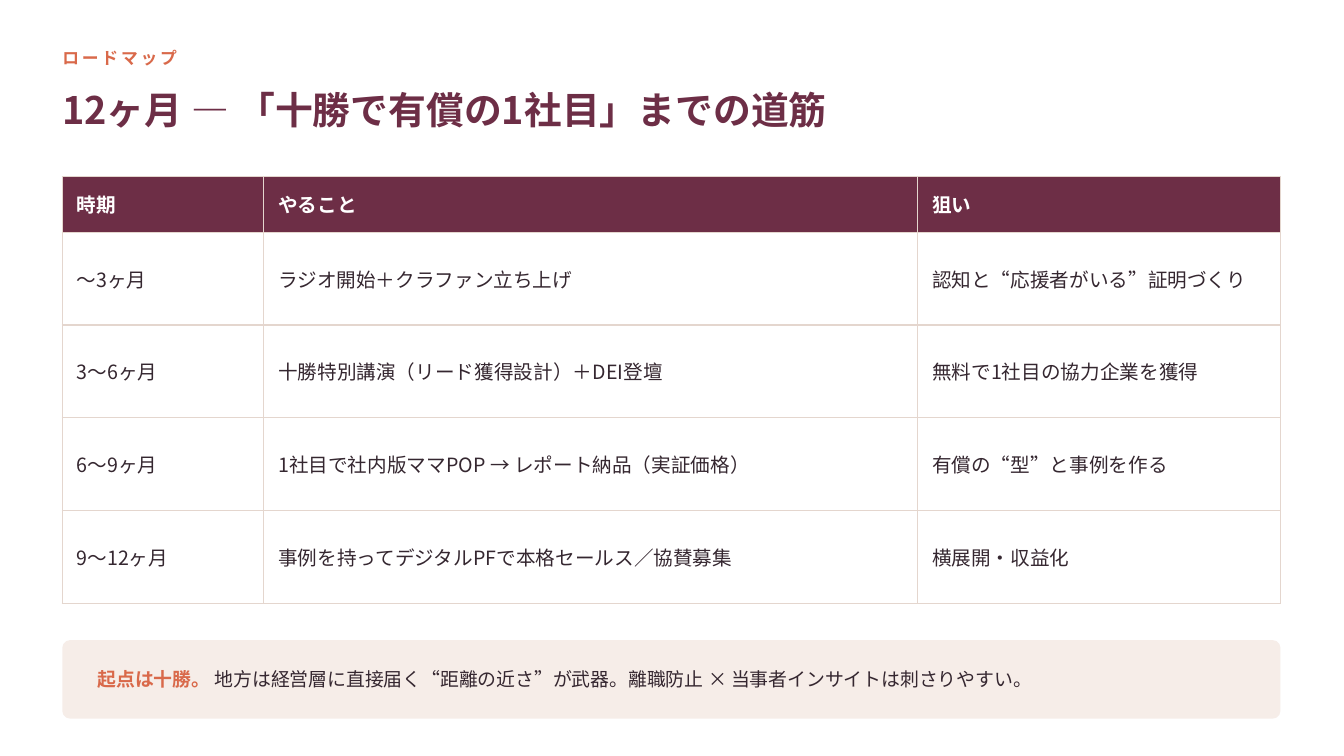
from lxml import etree
from pptx import Presentation
from pptx.dml.color import RGBColor
from pptx.enum.shapes import MSO_SHAPE
from pptx.enum.text import MSO_ANCHOR
from pptx.oxml.ns import qn
from pptx.util import Cm, Pt

ROUNDED = MSO_SHAPE.ROUNDED_RECTANGLE
MIDDLE = MSO_ANCHOR.MIDDLE

FONT = "Noto Sans CJK JP"
PLUM, CORAL, INK = "6D2E46", "D9694A", "352730"
WHITE, BLUSH, RULE = "FFFFFF", "F6EDE8", "E4D6CE"

KICKER = "ロードマップ"
TITLE = "12ヶ月 — 「十勝で有償の1社目」までの道筋"
ROADMAP = [
    ("時期", "やること", "狙い"),
    ("〜3ヶ月", "ラジオ開始＋クラファン立ち上げ", "認知と“応援者がいる”証明づくり"),
    ("3〜6ヶ月", "十勝特別講演（リード獲得設計）＋DEI登壇", "無料で1社目の協力企業を獲得"),
    ("6〜9ヶ月", "1社目で社内版ママPOP → レポート納品（実証価格）", "有償の“型”と事例を作る"),
    ("9〜12ヶ月", "事例を持ってデジタルPFで本格セールス／協賛募集", "横展開・収益化"),
]
NOTE_LEAD = "起点は十勝。 "
NOTE_BODY = "地方は経営層に直接届く“距離の近さ”が武器。離職防止 × 当事者インサイトは刺さりやすい。"

# Lengths in centimetres
LEFT, WIDTH = 1.57, 30.7
COLUMNS = (5.08, 16.48, 9.14)
TABLE_TOP, HEAD_HEIGHT, ROW_HEIGHT = 4.45, 1.4, 2.34
NOTE_TOP, NOTE_HEIGHT, NOTE_INDENT = 16.13, 1.98, 0.89


def rgb(color):
    return RGBColor.from_string(color)


def style_run(r, size, color, bold=False, spacing=0):
    r.font.name = FONT
    r.font.size = Pt(size)
    r.font.bold = bold
    r.font.color.rgb = rgb(color)
    rPr = r.font._element
    rPr.find(qn("a:latin")).addnext(rPr.makeelement(qn("a:ea"), {"typeface": FONT}))
    if spacing:
        rPr.set("spc", str(spacing * 100))


def add_text(slide, left, top, width, height, runs):
    """Add a one-paragraph box; each run is (text, size, color, bold, spacing)."""
    box = slide.shapes.add_textbox(Cm(left), Cm(top), Cm(width), Cm(height))
    tf = box.text_frame
    tf.word_wrap = True
    tf.vertical_anchor = MIDDLE
    tf.margin_left = tf.margin_right = tf.margin_top = tf.margin_bottom = 0
    for text, *style in runs:
        r = tf.paragraphs[0].add_run()
        r.text = text
        style_run(r, *style)


def add_borders(cell):
    tcPr = cell._tc.get_or_add_tcPr()
    for side in ("lnL", "lnR", "lnT", "lnB"):
        line = etree.SubElement(tcPr, qn("a:" + side), w=str(Pt(1)))
        fill = etree.SubElement(line, qn("a:solidFill"))
        etree.SubElement(fill, qn("a:srgbClr"), val=RULE)


def add_roadmap(slide):
    height = HEAD_HEIGHT + ROW_HEIGHT * (len(ROADMAP) - 1)
    table = slide.shapes.add_table(len(ROADMAP), len(COLUMNS), Cm(LEFT), Cm(TABLE_TOP),
                                   Cm(WIDTH), Cm(height)).table
    for column, width in zip(table.columns, COLUMNS):
        column.width = Cm(width)
    for i, texts in enumerate(ROADMAP):
        is_head = i == 0
        table.rows[i].height = Cm(HEAD_HEIGHT if is_head else ROW_HEIGHT)
        for j, text in enumerate(texts):
            cell = table.cell(i, j)
            cell.text_frame.text = text
            style_run(cell.text_frame.paragraphs[0].runs[0], 14,
                      WHITE if is_head else INK, is_head)
            cell.vertical_anchor = MIDDLE
            cell.margin_left = cell.margin_right = Cm(0.36)
            cell.margin_top = cell.margin_bottom = Cm(0.15)
            add_borders(cell)
            cell.fill.solid()
            cell.fill.fore_color.rgb = rgb(PLUM if is_head else WHITE)


def add_note(slide):
    sp = slide.shapes.add_shape(ROUNDED, Cm(LEFT), Cm(NOTE_TOP), Cm(WIDTH), Cm(NOTE_HEIGHT))
    sp.adjustments[0] = 0.1
    sp.shadow.inherit = False
    sp.fill.solid()
    sp.fill.fore_color.rgb = rgb(BLUSH)
    sp.line.fill.background()
    add_text(slide, LEFT + NOTE_INDENT, NOTE_TOP, WIDTH - 2 * NOTE_INDENT, NOTE_HEIGHT,
             [(NOTE_LEAD, 13.5, CORAL, True), (NOTE_BODY, 13.5, INK)])


def main():
    prs = Presentation()
    prs.slide_width, prs.slide_height = Cm(33.87), Cm(19.05)
    slide = prs.slides.add_slide(prs.slide_layouts[6])
    slide.background.fill.solid()
    slide.background.fill.fore_color.rgb = rgb(WHITE)
    add_text(slide, LEFT, 1.07, 27.94, 0.76, [(KICKER, 12, CORAL, True, 2)])
    add_text(slide, LEFT, 1.83, WIDTH, 1.83, [(TITLE, 27, PLUM, True)])
    add_roadmap(slide)
    add_note(slide)
    prs.save("out.pptx")


if __name__ == "__main__":
    main()
